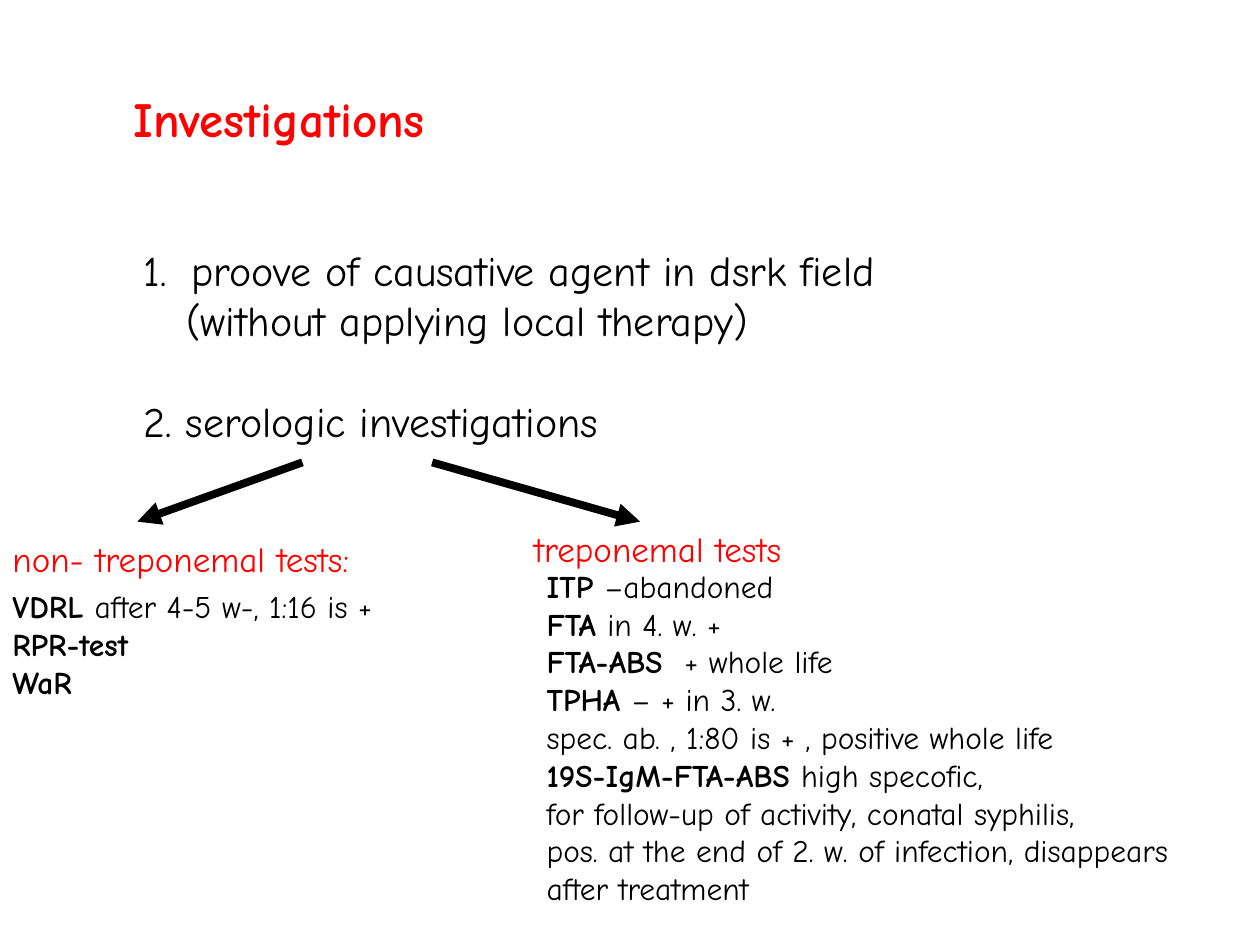
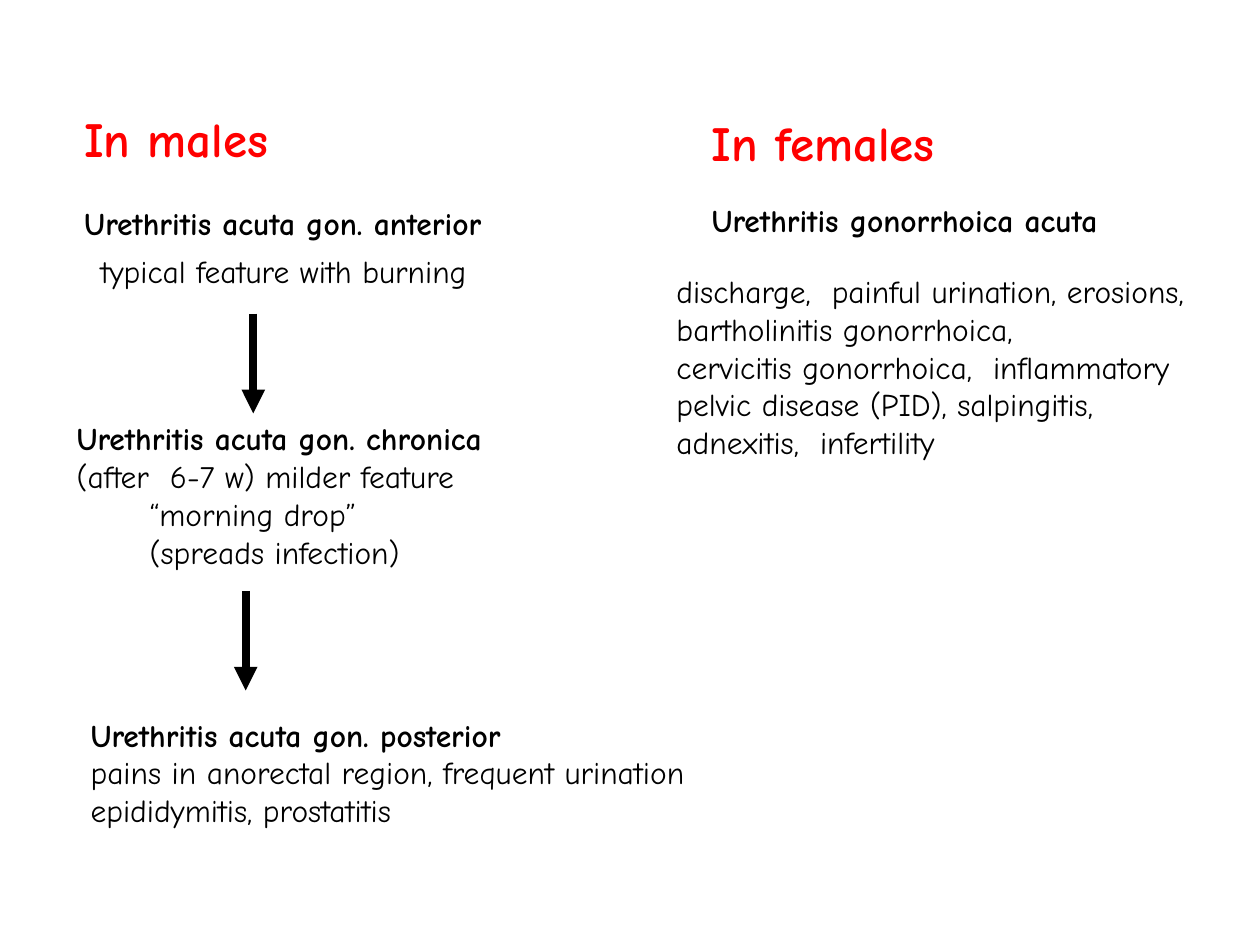
"""Build two slides on investigations and on gonorrhoea in males and females."""
from dataclasses import dataclass

import pptx
import pptx.dml.color
import pptx.enum.shapes
import pptx.enum.text
import pptx.oxml.ns
import pptx.slide
import pptx.text.text
import pptx.util
from lxml import etree

Inches = pptx.util.Inches
Pt = pptx.util.Pt


@dataclass(frozen=True)
class Theme:
    font: str = "Comic Neue"
    accent: pptx.dml.color.RGBColor = pptx.dml.color.RGBColor(0xFF, 0, 0)
    ink: pptx.dml.color.RGBColor = pptx.dml.color.RGBColor(0, 0, 0)
    title: int = 28
    step: int = 24
    heading: int = 20
    body: int = 18
    arrow: float = 4.5


THEME = Theme()


@dataclass(frozen=True)
class Line:
    bold: str = ""
    plain: str = ""
    indent: float = 0
    hanging: float = 0
    numbered: bool = False
    before: float = 0


@dataclass(frozen=True)
class Block:
    left: float
    top: float
    width: float
    height: float
    lines: tuple[Line, ...]
    size: int = THEME.body
    color: pptx.dml.color.RGBColor = THEME.ink
    wrap: bool = False


@dataclass(frozen=True)
class Arrow:
    x1: float
    y1: float
    x2: float
    y2: float


def title(left: float, top: float, width: float, text: str) -> Block:
    return Block(left, top, width, 0.57, (Line(text),), THEME.title, THEME.accent)


def heading(left: float, top: float, width: float, text: str, wrap: bool = False) -> Block:
    return Block(left, top, width, 0.44, (Line(plain=text),), THEME.heading, THEME.accent, wrap)


def write_line(paragraph: pptx.text.text._Paragraph, line: Line, block: Block) -> None:
    properties = paragraph._p.get_or_add_pPr()
    if line.indent:
        properties.set("marL", str(Inches(line.indent)))
        properties.set("indent", str(-Inches(line.hanging)))
    if line.numbered:
        numbering = etree.SubElement(properties, pptx.oxml.ns.qn("a:buAutoNum"))
        numbering.set("type", "arabicPeriod")
    if line.before:
        paragraph.space_before = Pt(line.before)
    for text, bold in ((line.bold, True), (line.plain, False)):
        if text:
            run = paragraph.add_run()
            run.text = text
            run.font.name = THEME.font
            run.font.size = Pt(block.size)
            run.font.bold = bold
            run.font.color.rgb = block.color


def draw_block(slide: pptx.slide.Slide, block: Block) -> None:
    box = slide.shapes.add_textbox(
        Inches(block.left), Inches(block.top), Inches(block.width), Inches(block.height))
    frame = box.text_frame
    frame.word_wrap = block.wrap
    frame.auto_size = pptx.enum.text.MSO_AUTO_SIZE.SHAPE_TO_FIT_TEXT
    for index, line in enumerate(block.lines):
        paragraph = frame.add_paragraph() if index else frame.paragraphs[0]
        write_line(paragraph, line, block)


def draw_arrow(slide: pptx.slide.Slide, arrow: Arrow) -> None:
    connector = slide.shapes.add_connector(
        pptx.enum.shapes.MSO_CONNECTOR.STRAIGHT,
        Inches(arrow.x1), Inches(arrow.y1), Inches(arrow.x2), Inches(arrow.y2))
    connector.line.color.rgb = THEME.ink
    connector.line.width = Pt(THEME.arrow)
    tip = etree.SubElement(connector.line._get_or_add_ln(), pptx.oxml.ns.qn("a:tailEnd"))
    tip.set("type", "triangle")
    etree.SubElement(connector._element.spPr, pptx.oxml.ns.qn("a:effectLst"))


INVESTIGATIONS = (
    title(0.96, 0.65, 2.84, "Investigations"),
    Block(1.04, 1.89, 6.68, 2.42, (
        Line(plain="proove of causative agent in dsrk field",
             indent=0.38, hanging=0.38, numbered=True),
        Line(plain="(without applying local therapy)", indent=0.34),
        Line(plain="2. serologic investigations", before=29),
    ), THEME.step),
    Arrow(2.4, 3.67, 1.09, 4.14),
    Arrow(3.43, 3.67, 5.08, 4.14),
    heading(0, 4.22, 3.35, "non- treponemal tests:", wrap=True),
    heading(4.14, 4.14, 2.51, "treponemal tests"),
    Block(0, 4.61, 3.54, 1.01, (
        Line("VDRL ", "after 4-5 w-, 1:16 is +"),
        Line("RPR-test"),
        Line("WaR"),
    )),
    Block(4.24, 4.45, 5.76, 2.83, (
        Line("ITP ", "–abandoned"),
        Line("FTA ", "in 4. w. +"),
        Line("FTA-ABS ", " + whole life"),
        Line("TPHA ", "– + in 3. w."),
        Line(plain="spec. ab. , 1:80 is + , positive whole life"),
        Line("19S-IgM-FTA-ABS ", "high specofic,"),
        Line(plain="for follow-up of activity, conatal syphilis,"),
        Line(plain="pos. at the end of 2. w. of infection, disappears"),
        Line(plain="after treatment"),
    )),
)

GONORRHOEA = (
    title(0.57, 0.81, 1.83, "In males"),
    title(5.55, 0.84, 2.25, "In females"),
    Block(0.57, 1.57, 3.85, 0.4, (Line("Urethritis acuta gon. anterior"),)),
    Block(0.7, 1.95, 3.49, 0.4, (Line(plain="typical feature with burning"),)),
    Block(0.51, 3.28, 3.91, 1.31, (
        Line("Urethritis acuta gon. chronica"),
        Line(plain="(after  6-7 w) milder feature"),
        Line(plain="“morning drop”", indent=0.58),
        Line(plain="(spreads infection)", indent=0.58),
    )),
    Arrow(2.01, 2.49, 2.01, 3.28),
    Block(0.62, 5.63, 5.35, 1.01, (
        Line("Urethritis acuta gon. posterior"),
        Line(plain="pains in anorectal region, frequent urination"),
        Line(plain="epididymitis, prostatitis"),
    )),
    Arrow(1.95, 4.69, 1.95, 5.48),
    Block(5.55, 1.55, 4.25, 0.4, (Line("Urethritis gonorrhoica acuta"),), wrap=True),
    Block(5.27, 2.11, 4.79, 1.62, (
        Line(plain="discharge,  painful urination, erosions,"),
        Line(plain="bartholinitis gonorrhoica,"),
        Line(plain="cervicitis gonorrhoica,  inflammatory"),
        Line(plain="pelvic disease (PID), salpingitis,"),
        Line(plain="adnexitis,  infertility"),
    )),
)


def main() -> None:
    presentation = pptx.Presentation()
    presentation.slide_width = Inches(10)
    presentation.slide_height = Inches(7.5)
    for content in (INVESTIGATIONS, GONORRHOEA):
        slide = presentation.slides.add_slide(presentation.slide_layouts[6])
        for part in content:
            if isinstance(part, Arrow):
                draw_arrow(slide, part)
            else:
                draw_block(slide, part)
    presentation.save("out.pptx")


if __name__ == "__main__":
    main()
